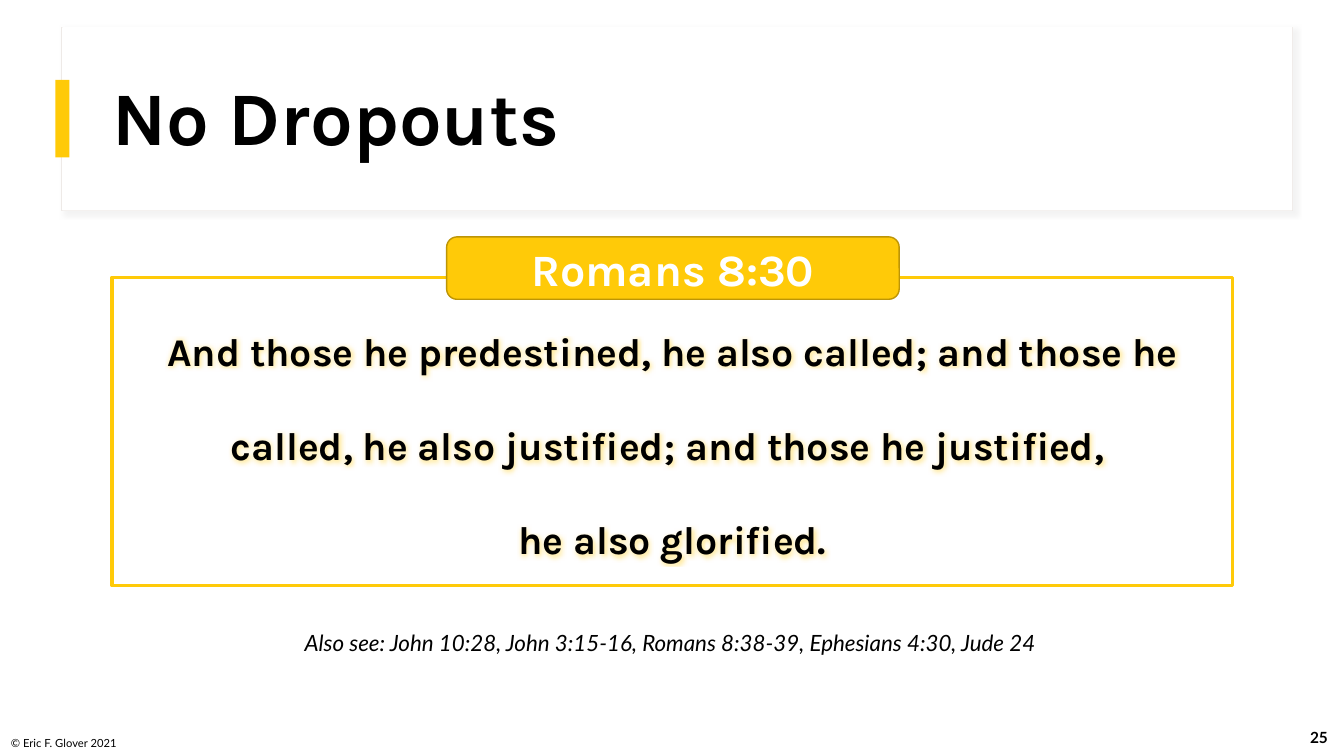
from lxml import etree
from pptx import Presentation
from pptx import util as u
from pptx.dml.color import RGBColor
from pptx.enum import shapes, text
from pptx.oxml import parse_xml
from pptx.oxml.ns import nsdecls, qn

HUES = {"gold": "FFCA08", "dark": "BD9506", "white": "FFFFFF",
        "black": "000000", "rim": "EEEAE7", "shade": "D9D9D9"}
MID = text.PP_ALIGN.CENTER


class Deck:
    def __init__(self, wide, high):
        self.prs = Presentation()
        self.prs.slide_width, self.prs.slide_height = u.Pt(wide), u.Pt(high)
        self.slide = self.prs.slides.add_slide(self.prs.slide_layouts[6])

    def put(self, item, **vals):
        for key, val in vals.items():
            setattr(item, key, val)

    def hue(self, name):
        return RGBColor.from_string(HUES[name])

    def box(self, place, fill=None, line=None, width=1, kind="RECTANGLE"):
        form = getattr(shapes.MSO_SHAPE, kind)
        item = self.slide.shapes.add_shape(form, *map(u.Pt, place))
        item.shadow.inherit = False
        if fill:
            item.fill.solid()
            item.fill.fore_color.rgb = self.hue(fill)
        else:
            item.fill.background()
        if line:
            item.line.color.rgb = self.hue(line)
            item.line.width = u.Pt(width)
        else:
            item.line.fill.background()
        return item

    def area(self, place):
        return self.slide.shapes.add_textbox(*map(u.Pt, place))

    def label(self, item, words, size, face="Karla", hue="black",
              anchor="MIDDLE", frame=None, para=None, **font):
        body = item.text_frame
        self.put(body, word_wrap=True, **(frame or {}),
                 vertical_anchor=getattr(text.MSO_ANCHOR, anchor))
        line = body.paragraphs[0]
        self.put(line, **(para or {}))
        for num, part in enumerate(words.split("\n")):
            if num:
                line.add_line_break()
            run = line.add_run()
            run.text = part
            self.put(run.font, size=u.Pt(size), name=face, **font)
            run.font.color.rgb = self.hue(hue)

    def shade(self, item, hue, alpha, blur, dist, turn):
        blot = item._element.spPr.find(qn("a:effectLst"))
        blot.append(parse_xml(
            f'<a:outerShdw {nsdecls("a")} blurRad="{u.Pt(blur)}" '
            f'dist="{u.Pt(dist)}" dir="{turn * 60000}" algn="tl" rotWithShape="0">'
            f'<a:srgbClr val="{HUES[hue]}"><a:alpha val="{alpha * 1000}"/>'
            '</a:srgbClr></a:outerShdw>'))

    def glow(self, item, hue, alpha, size):
        for run in item.text_frame.paragraphs[0].runs:
            fill = run.font._element.find(qn("a:solidFill"))
            blot = etree.Element(qn("a:effectLst"))
            blot.append(parse_xml(
                f'<a:glow {nsdecls("a")} rad="{u.Pt(size)}">'
                f'<a:srgbClr val="{HUES[hue]}"><a:alpha val="{alpha * 1000}"/>'
                '</a:srgbClr></a:glow>'))
            fill.addnext(blot)


def main():
    deck = Deck(960, 540)

    page = deck.area((924.5, 512, 35.3, 28.8))
    deck.label(page, "25", 11, "Lato", bold=True,
               para={"alignment": MID, "space_after": u.Pt(6)})
    note = deck.area((0.7, 519, 113, 20.2))
    deck.label(note, "© Eric F. Glover 2021", 8, "Lato", anchor="BOTTOM")

    panel = deck.box((44, 19.4, 879, 131), "white", "rim", 0.75)
    deck.shade(panel, "shade", 30, 4, 3, 45)
    deck.box((44.6, 19.4, 878.4, 131), "white")
    deck.box((39.6, 57, 10, 55.4), "gold")
    title = deck.area((73.4, 40.3, 800.6, 92.9))
    deck.label(title, "No Dropouts", 54, bold=True, para={"line_spacing": 0.9})

    verse = deck.box((80, 198, 800.6, 220.3), None, "gold", 2.25)
    deck.label(verse, "And those he predestined, he also called; and those he "
               "called, he also justified; and those he justified, \n"
               "he also glorified.", 28, bold=True,
               frame={"margin_top": 0, "margin_bottom": u.Pt(14.4)},
               para={"alignment": MID, "line_spacing": 2.0,
                     "space_before": u.Pt(10)})
    deck.glow(verse, "gold", 40, 5)

    badge = deck.box((319, 169.2, 323.3, 44.6), "gold", "dark", 1,
                     "ROUNDED_RECTANGLE")
    deck.label(badge, "Romans 8:30", 32, hue="white", bold=True,
               para={"alignment": MID})
    more = deck.area((104.4, 445.7, 752.4, 26.6))
    deck.label(more, "Also see: John 10:28, John 3:15-16, Romans 8:38-39, "
               "Ephesians 4:30, Jude 24 ", 16, "Lato", anchor="TOP",
               italic=True, para={"alignment": MID})

    deck.prs.save("out.pptx")


if __name__ == "__main__":
    main()
